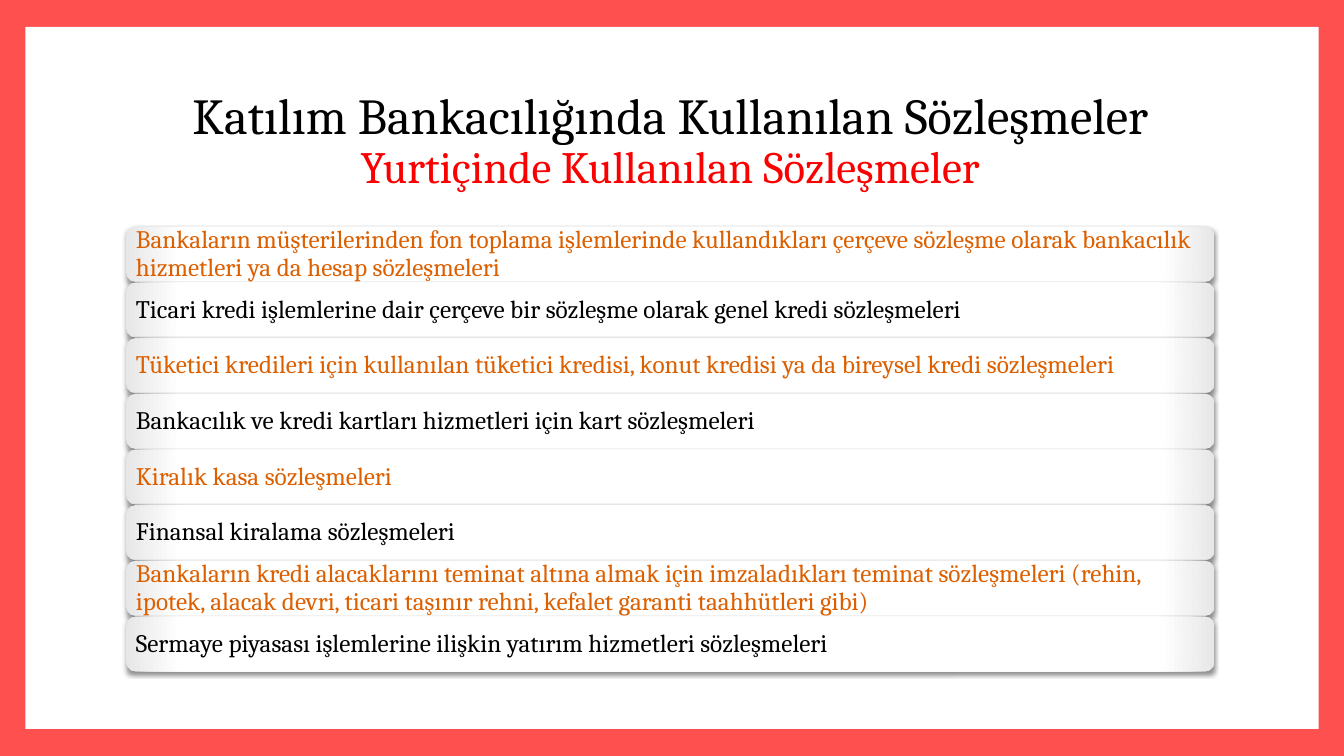
"""Builds a slide listing the contracts used domestically in participation banking."""
import dataclasses

import lxml.etree
import pptx
import pptx.dml.color
import pptx.enum.shapes
import pptx.enum.text
import pptx.oxml
import pptx.oxml.ns
import pptx.util
from pptx.util import Cm, Pt

TITLE = "Katılım Bankacılığında Kullanılan Sözleşmeler"
SUBTITLE = "Yurtiçinde Kullanılan Sözleşmeler"
CONTRACTS = [
    "Bankaların müşterilerinden fon toplama işlemlerinde kullandıkları çerçeve sözleşme olarak "
    "bankacılık hizmetleri ya da hesap sözleşmeleri",
    "Ticari kredi işlemlerine dair çerçeve bir sözleşme olarak genel kredi sözleşmeleri",
    "Tüketici kredileri için kullanılan tüketici kredisi, konut kredisi ya da bireysel kredi "
    "sözleşmeleri",
    "Bankacılık ve kredi kartları hizmetleri için kart sözleşmeleri",
    "Kiralık kasa sözleşmeleri",
    "Finansal kiralama sözleşmeleri",
    "Bankaların kredi alacaklarını teminat altına almak için imzaladıkları teminat sözleşmeleri "
    "(rehin, ipotek, alacak devri, ticari taşınır rehni, kefalet garanti taahhütleri gibi)",
    "Sermaye piyasası işlemlerine ilişkin yatırım hizmetleri sözleşmeleri",
]


@dataclasses.dataclass(frozen=True)
class Theme:
    """Colours, font and type sizes of the slide."""
    font: str = "Cambria"
    frame: str = "FF5050"
    panel: str = "FFFFFF"
    card_edge: str = "E7E7E7"
    text: str = "000000"
    accent: str = "DC5F00"
    subtitle: str = "FB0000"
    title_size: int = 36
    subtitle_size: int = 32
    card_size: int = 18


THEME = Theme()
SLIDE_WIDTH, SLIDE_HEIGHT = Cm(33.87), Cm(19.05)
MARGIN_X, MARGIN_Y = Cm(0.64), Cm(0.68)
CONTENT_LEFT, CONTENT_WIDTH = Cm(3.18), Cm(27.43)
TITLE_TOP, TITLE_HEIGHT = Cm(1.7), Cm(3.76)
LIST_TOP, LIST_HEIGHT = Cm(5.72), Cm(11.2)
CARD_HEIGHT, CARD_INSET = Cm(1.38), Cm(0.18)

NAMESPACE = pptx.oxml.ns.nsdecls("a")
CARD_GRADIENT = f"""<a:gradFill {NAMESPACE} rotWithShape="1"><a:gsLst>
<a:gs pos="0"><a:srgbClr val="{THEME.panel}"/></a:gs>
<a:gs pos="90000"><a:srgbClr val="{THEME.panel}"/></a:gs>
<a:gs pos="100000"><a:srgbClr val="{THEME.card_edge}"/></a:gs></a:gsLst>
<a:path path="circle"><a:fillToRect l="100000" t="100000" r="100000" b="100000"/></a:path>
</a:gradFill>"""
CARD_SHADOW = f"""<a:outerShdw {NAMESPACE} blurRad="{Pt(3)}" dist="{Pt(2)}" dir="5400000"
rotWithShape="0"><a:srgbClr val="{THEME.text}"><a:alpha val="45000"/></a:srgbClr></a:outerShdw>"""


def rgb(value):
    """Return the colour for a hexadecimal value."""
    return pptx.dml.color.RGBColor.from_string(value)


def add_run(paragraph, text, size, color):
    """Add one formatted run to a paragraph."""
    run = paragraph.add_run()
    run.text = text
    run.font.name = THEME.font
    run.font.size = Pt(size)
    run.font.color.rgb = rgb(color)


def add_panel(slide):
    """Lay the white panel behind everything else."""
    panel = slide.shapes.add_shape(
        pptx.enum.shapes.MSO_SHAPE.RECTANGLE, MARGIN_X, MARGIN_Y,
        SLIDE_WIDTH - 2 * MARGIN_X, SLIDE_HEIGHT - 2 * MARGIN_Y)
    panel.shadow.inherit = False
    panel.fill.solid()
    panel.fill.fore_color.rgb = rgb(THEME.panel)
    panel.line.fill.background()
    slide.shapes.title._element.addprevious(panel._element)


def add_title(slide):
    """Place the title and its coloured second line."""
    title = slide.shapes.title
    title.left, title.top = CONTENT_LEFT, TITLE_TOP
    title.width, title.height = CONTENT_WIDTH, TITLE_HEIGHT
    frame = title.text_frame
    frame.auto_size = pptx.enum.text.MSO_AUTO_SIZE.NONE
    frame.vertical_anchor = pptx.enum.text.MSO_ANCHOR.MIDDLE
    paragraph = frame.paragraphs[0]
    paragraph.alignment = pptx.enum.text.PP_ALIGN.CENTER
    paragraph.line_spacing = 0.9
    add_run(paragraph, TITLE, THEME.title_size, THEME.text)
    paragraph.add_line_break()
    add_run(paragraph, SUBTITLE, THEME.subtitle_size, THEME.subtitle)


def add_card(slide, top, text, color):
    """Add one rounded card holding a contract."""
    card = slide.shapes.add_shape(
        pptx.enum.shapes.MSO_SHAPE.ROUNDED_RECTANGLE,
        CONTENT_LEFT, top, CONTENT_WIDTH, CARD_HEIGHT)
    card.line.fill.background()
    card.shadow.inherit = False
    properties = card._element.spPr
    outline = properties.find(pptx.oxml.ns.qn("a:ln"))
    outline.addprevious(pptx.oxml.parse_xml(CARD_GRADIENT))
    effects = properties.find(pptx.oxml.ns.qn("a:effectLst"))
    effects.append(pptx.oxml.parse_xml(CARD_SHADOW))
    frame = card.text_frame
    frame.word_wrap = True
    frame.vertical_anchor = pptx.enum.text.MSO_ANCHOR.MIDDLE
    frame.margin_left = frame.margin_right = CARD_INSET
    frame.margin_top = frame.margin_bottom = CARD_INSET
    paragraph = frame.paragraphs[0]
    paragraph.alignment = pptx.enum.text.PP_ALIGN.LEFT
    paragraph.line_spacing = 0.9
    add_run(paragraph, text, THEME.card_size, color)


def main():
    """Build and save the presentation."""
    presentation = pptx.Presentation()
    presentation.slide_width, presentation.slide_height = SLIDE_WIDTH, SLIDE_HEIGHT
    slide = presentation.slides.add_slide(presentation.slide_layouts.get_by_name("Title Only"))
    slide.background.fill.solid()
    slide.background.fill.fore_color.rgb = rgb(THEME.frame)
    add_panel(slide)
    add_title(slide)
    pitch = (LIST_HEIGHT - CARD_HEIGHT) / (len(CONTRACTS) - 1)
    for index, contract in enumerate(CONTRACTS):
        color = THEME.text if index % 2 else THEME.accent
        add_card(slide, round(LIST_TOP + index * pitch), contract, color)
    presentation.save("out.pptx")


if __name__ == "__main__":
    main()
